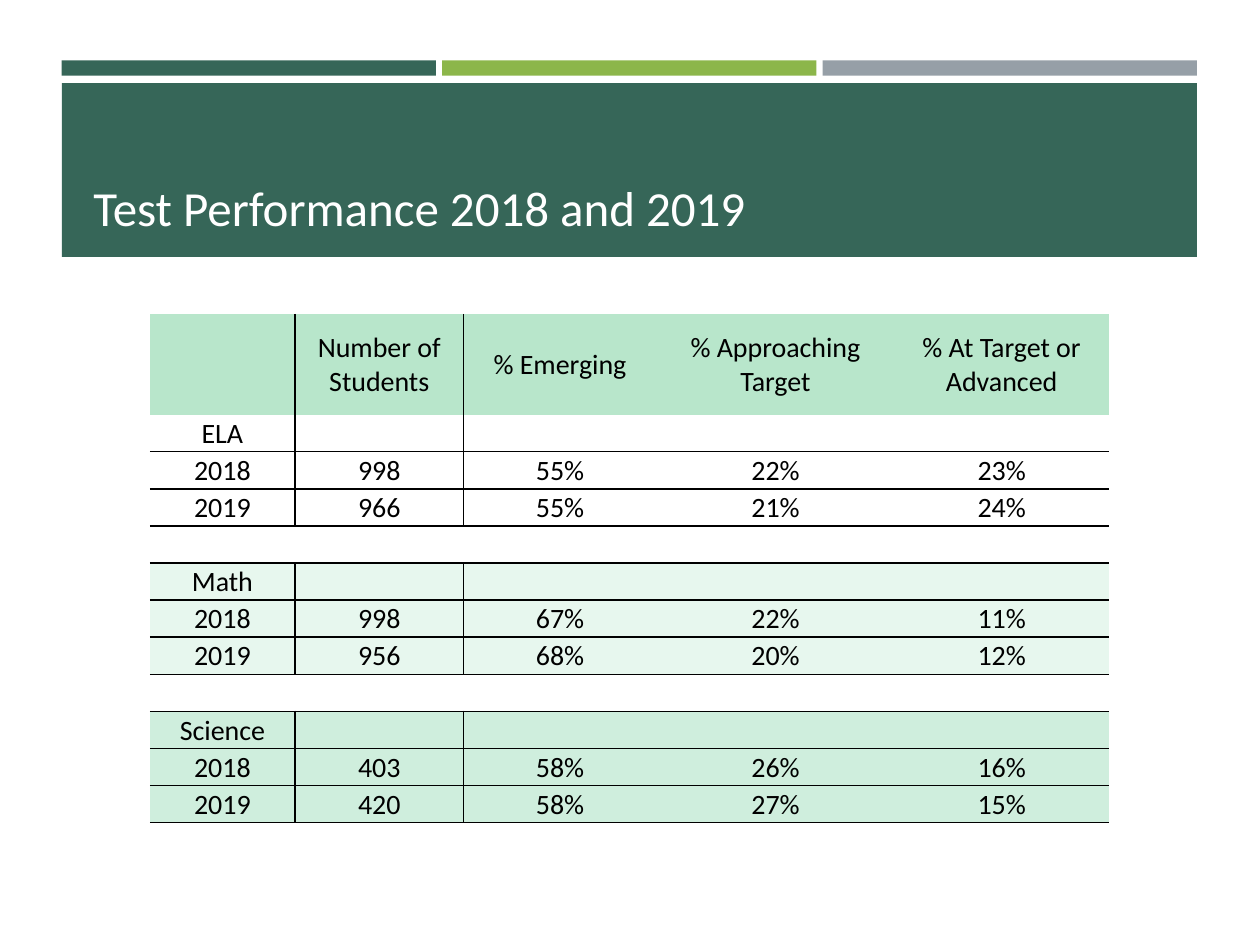
from lxml.etree import SubElement
from pptx import Presentation
from pptx.dml.color import RGBColor as RGB
from pptx.enum.shapes import MSO_SHAPE as SHAPE
from pptx.enum.text import MSO_ANCHOR as ANCHOR, PP_ALIGN as ALIGN
from pptx.oxml.ns import qn
from pptx.util import Inches, Pt

COLORS = {"green": "366658", "lime": "8CB64A", "gray": "969FA7", "white": "FFFFFF",
          "black": "000000", "header": "B8E6CB", "math": "E7F7EE", "science": "CFEEDD"}
FONT = "Calibri"
NO_STYLE = "{2D5ABB26-0587-4C30-8999-92F81FD0307C}"
HEADER = ["", "Number of Students", "% Emerging", "% Approaching Target", "% At Target or Advanced"]
SECTIONS = [
    ("ELA", None, [["2018", "998", "55%", "22%", "23%"], ["2019", "966", "55%", "21%", "24%"]]),
    ("Math", "math", [["2018", "998", "67%", "22%", "11%"], ["2019", "956", "68%", "20%", "12%"]]),
    ("Science", "science", [["2018", "403", "58%", "26%", "16%"], ["2019", "420", "58%", "27%", "15%"]]),
]
COL_WIDTHS = [1.15, 1.34, 1.53, 1.89, 1.7]
HEADER_HEIGHT, TABLE_HEIGHT = 0.8, 4.04


def set_text(tf, text, size=16, color="black", align=ALIGN.CENTER):
    """Write one formatted paragraph, keeping the size when it is empty."""
    p = tf.paragraphs[0]
    p.alignment = align
    if text:
        r = p.add_run()
        r.text = text
        r.font.size, r.font.name = Pt(size), FONT
        r.font.color.rgb = RGB.from_string(COLORS[color])
    else:
        SubElement(p._p, qn("a:endParaRPr"), sz=str(size * 100))


def add_bar(s, left, top, width, height, color):
    """Add a plain filled rectangle."""
    sp = s.shapes.add_shape(SHAPE.RECTANGLE, *map(Inches, (left, top, width, height)))
    sp.shadow.inherit = False
    sp.fill.solid()
    sp.fill.fore_color.rgb = RGB.from_string(COLORS[color])
    sp.line.fill.background()


def add_title(s, text):
    """Place the title placeholder in front of the banner."""
    title = s.shapes.title
    title.left, title.top, title.width, title.height = map(Inches, (0.64, 0.75, 8.74, 1.18))
    title.element.getparent().append(title.element)
    title.text_frame.vertical_anchor = ANCHOR.BOTTOM
    set_text(title.text_frame, text, size=28, color="white", align=ALIGN.LEFT)


def set_borders(cell, sides):
    """Draw the named sides (L, R, T, B) of a cell and clear the others."""
    tcPr = cell._tc.get_or_add_tcPr()
    for side in "LRTB":
        ln = SubElement(tcPr, qn(f"a:ln{side}"), w=str(Pt(1)))
        if side in sides:
            fill = SubElement(ln, qn("a:solidFill"))
            SubElement(fill, qn("a:srgbClr"), val=COLORS["black"])
        else:
            SubElement(ln, qn("a:noFill"))


def format_cell(cell, text, color, sides):
    """Set the text, margins, borders and fill of a cell."""
    cell.margin_left = cell.margin_right = cell.margin_top = Inches(0.01)
    cell.margin_bottom = 0
    cell.vertical_anchor = ANCHOR.MIDDLE
    set_text(cell.text_frame, text)
    set_borders(cell, sides)
    if color:
        cell.fill.solid()
        cell.fill.fore_color.rgb = RGB.from_string(COLORS[color])
    else:
        cell.fill.background()


def table_rows():
    """List each row as its texts, fill colour, horizontal and vertical borders."""
    blank = [""] * len(HEADER)
    rows = [(HEADER, "header", "", True)]
    for i, (name, color, years) in enumerate(SECTIONS):
        if i:
            rows.append((blank, None, "TB", False))
        rows.append(([name] + blank[1:], color, "TB" if i else "B", True))
        rows += [(year, color, "TB", True) for year in years]
    return rows


def add_results_table(s):
    """Add the table of results by subject and year."""
    rows = table_rows()
    table = s.shapes.add_table(len(rows), len(HEADER), Inches(1.19), Inches(2.49),
                               Inches(sum(COL_WIDTHS)), Inches(TABLE_HEIGHT)).table
    table._tbl.tblPr.find(qn("a:tableStyleId")).text = NO_STYLE
    table.horz_banding = False
    for col, width in zip(table.columns, COL_WIDTHS):
        col.width = Inches(width)
    row_height = (TABLE_HEIGHT - HEADER_HEIGHT) / (len(rows) - 1)
    vertical = ["R", "LR", "L", "", ""]
    for i, (texts, color, horizontal, divided) in enumerate(rows):
        table.rows[i].height = Inches(row_height if i else HEADER_HEIGHT)
        for j, text in enumerate(texts):
            sides = horizontal + (vertical[j] if divided else "")
            format_cell(table.cell(i, j), text, color, sides)


def main():
    """Build and save the slide."""
    prs = Presentation()
    prs.slide_width, prs.slide_height = Inches(10), Inches(7.5)
    s = prs.slides.add_slide(prs.slide_layouts[5])
    for i, color in enumerate(["green", "lime", "gray"]):
        add_bar(s, 0.49 + i * 3.02, 0.48, 2.97, 0.12, color)
    add_bar(s, 0.49, 0.66, 9.01, 1.38, "green")
    add_title(s, "Test Performance 2018 and 2019")
    add_results_table(s)
    prs.save("out.pptx")


if __name__ == "__main__":
    main()
